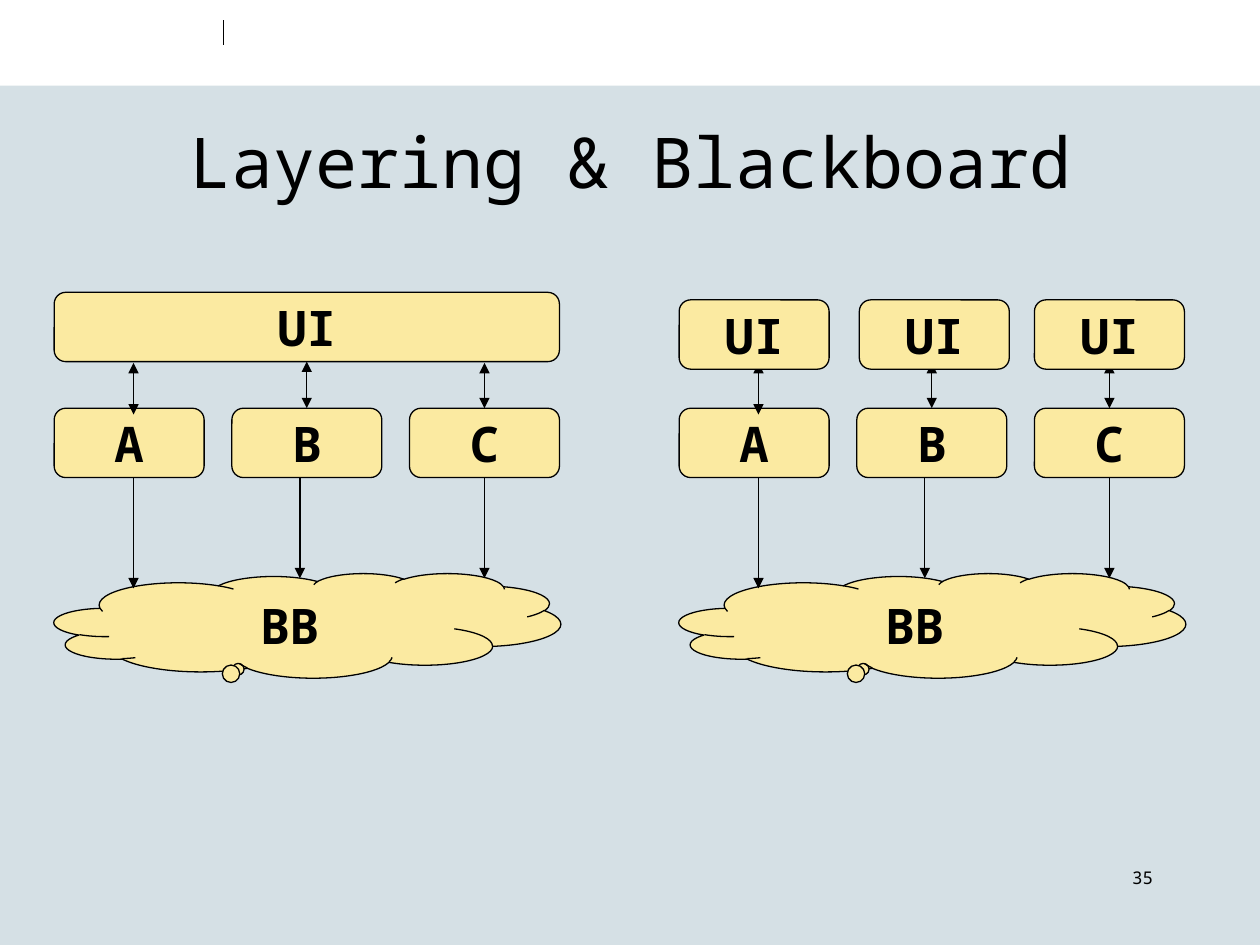
from dataclasses import dataclass

from lxml.etree import SubElement
from pptx import Presentation
from pptx.dml.color import RGBColor
from pptx.enum.shapes import MSO_CONNECTOR, MSO_SHAPE
from pptx.enum.text import MSO_ANCHOR, PP_ALIGN
from pptx.oxml.ns import qn
from pptx.util import Inches, Pt

BLACK = RGBColor(0x00, 0x00, 0x00)
WHITE = RGBColor(0xFF, 0xFF, 0xFF)
YELLOW = RGBColor(0xFB, 0xEA, 0xA1)
BACKGROUND = RGBColor(0xD5, 0xE0, 0xE5)
FONT = "Noto Sans Mono"
BOX_WIDTH, BOX_HEIGHT = 1.19, 0.55
DIAGRAM_WIDTH = 4.02
MODULE_TOP = 3.24
MODULE_PITCH = 1.41


@dataclass
class Interface:
    offset: float
    width: float


@dataclass
class Diagram:
    left: float
    interface_top: float
    interfaces: list[Interface]


@dataclass
class Link:
    down_offset: float
    down_end: float
    both_offset: float
    both_end: float


DIAGRAMS = [
    Diagram(0.43, 2.32, [Interface(0, 4.01)]),
    Diagram(5.39, 2.38, [Interface(offset, BOX_WIDTH) for offset in (0, 1.43, 2.82)]),
]
LINKS = [
    Link(0.63, 4.67, 0.63, 3.29),
    Link(1.95, 4.59, 2.01, 3.25),
    Link(3.42, 4.59, 3.42, 3.25),
]


def format_text(frame, text: str, size: int, align, bold: bool = False) -> None:
    frame.text = text
    para = frame.paragraphs[0]
    para.alignment = align
    para.font.name = FONT
    para.font.size = Pt(size)
    para.font.bold = bold
    para.font.color.rgb = BLACK


def add_node(page, kind, text: str, left: float, top: float, width: float, height: float):
    node = page.shapes.add_shape(kind, Inches(left), Inches(top), Inches(width), Inches(height))
    node.shadow.inherit = False
    node.fill.solid()
    node.fill.fore_color.rgb = YELLOW
    node.line.color.rgb = BLACK
    node.line.width = Pt(0.75)
    format_text(node.text_frame, text, 28, PP_ALIGN.CENTER, True)
    return node


def add_box(page, text: str, left: float, top: float, width: float = BOX_WIDTH):
    box = add_node(page, MSO_SHAPE.ROUNDED_RECTANGLE, text, left, top, width, BOX_HEIGHT)
    box.text_frame.word_wrap = False
    box.text_frame.vertical_anchor = MSO_ANCHOR.MIDDLE
    return box


def add_cloud(page, left: float) -> None:
    cloud = add_node(page, MSO_SHAPE.CLOUD_CALLOUT, "BB", left, 4.55, DIAGRAM_WIDTH, 0.83)
    cloud.adjustments[0] = -0.132
    cloud.adjustments[1] = 0.404
    cloud.text_frame.word_wrap = True
    cloud.text_frame.vertical_anchor = MSO_ANCHOR.TOP


def add_line(page, x: float, top: float, bottom: float, width: float, arrows: tuple[str, ...] = ()):
    line = page.shapes.add_connector(
        MSO_CONNECTOR.STRAIGHT, Inches(x), Inches(top), Inches(x), Inches(bottom)
    )
    line.line.color.rgb = BLACK
    line.line.width = Pt(width)
    for arrow in arrows:
        SubElement(line.line._get_or_add_ln(), qn(arrow), type="triangle")
    SubElement(line._element.spPr, qn("a:effectLst"))
    return line


def add_diagram(page, diagram: Diagram) -> None:
    left = diagram.left
    add_cloud(page, left)
    modules = [
        add_box(page, name, left + index * MODULE_PITCH, MODULE_TOP)
        for index, name in enumerate("ABC")
    ]
    middle = BOX_WIDTH / 2
    both_arrows = []
    for index, (module, link) in enumerate(zip(modules, LINKS)):
        center = index * MODULE_PITCH + middle
        down_centered = abs(link.down_offset - center) < 0.02
        both_centered = abs(link.both_offset - center) < 0.02
        down_x = left + (center if down_centered else link.down_offset)
        both_x = left + (center if both_centered else link.both_offset)
        down = add_line(page, down_x, MODULE_TOP + BOX_HEIGHT, link.down_end, 0.75, ("a:tailEnd",))
        both = add_line(page, both_x, 2.88, link.both_end, 0.75, ("a:headEnd", "a:tailEnd"))
        if down_centered:
            down.begin_connect(module, 2)
        if both_centered:
            both.end_connect(module, 0)
        both_arrows.append(both)
    interfaces = [
        add_box(page, "UI", left + item.offset, diagram.interface_top, item.width)
        for item in diagram.interfaces
    ]
    if len(interfaces) == 1:
        both_arrows[1].begin_connect(interfaces[0], 2)


def add_frame(page) -> None:
    band = page.shapes.add_shape(MSO_SHAPE.RECTANGLE, 0, 0, Inches(10), Inches(0.68))
    band.shadow.inherit = False
    band.fill.solid()
    band.fill.fore_color.rgb = WHITE
    band.line.fill.background()
    add_line(page, 1.77, 0.16, 0.36, 0.5)

    title = page.shapes.title
    title.left, title.top = Inches(0.75), Inches(0.76)
    title.width, title.height = Inches(8.5), Inches(1.02)
    title.text_frame.vertical_anchor = MSO_ANCHOR.MIDDLE
    format_text(title.text_frame, "Layering & Blackboard", 40, PP_ALIGN.CENTER)

    number = page.shapes.add_textbox(Inches(7.17), Inches(6.83), Inches(2.08), Inches(0.5))
    number.text_frame.word_wrap = True
    format_text(number.text_frame, "35", 10, PP_ALIGN.RIGHT)


def main() -> None:
    deck = Presentation()
    deck.slide_width, deck.slide_height = Inches(10), Inches(7.5)
    page = deck.slides.add_slide(deck.slide_layouts[5])
    page.background.fill.solid()
    page.background.fill.fore_color.rgb = BACKGROUND
    add_frame(page)
    for diagram in DIAGRAMS:
        add_diagram(page, diagram)
    deck.save("out.pptx")


if __name__ == "__main__":
    main()
